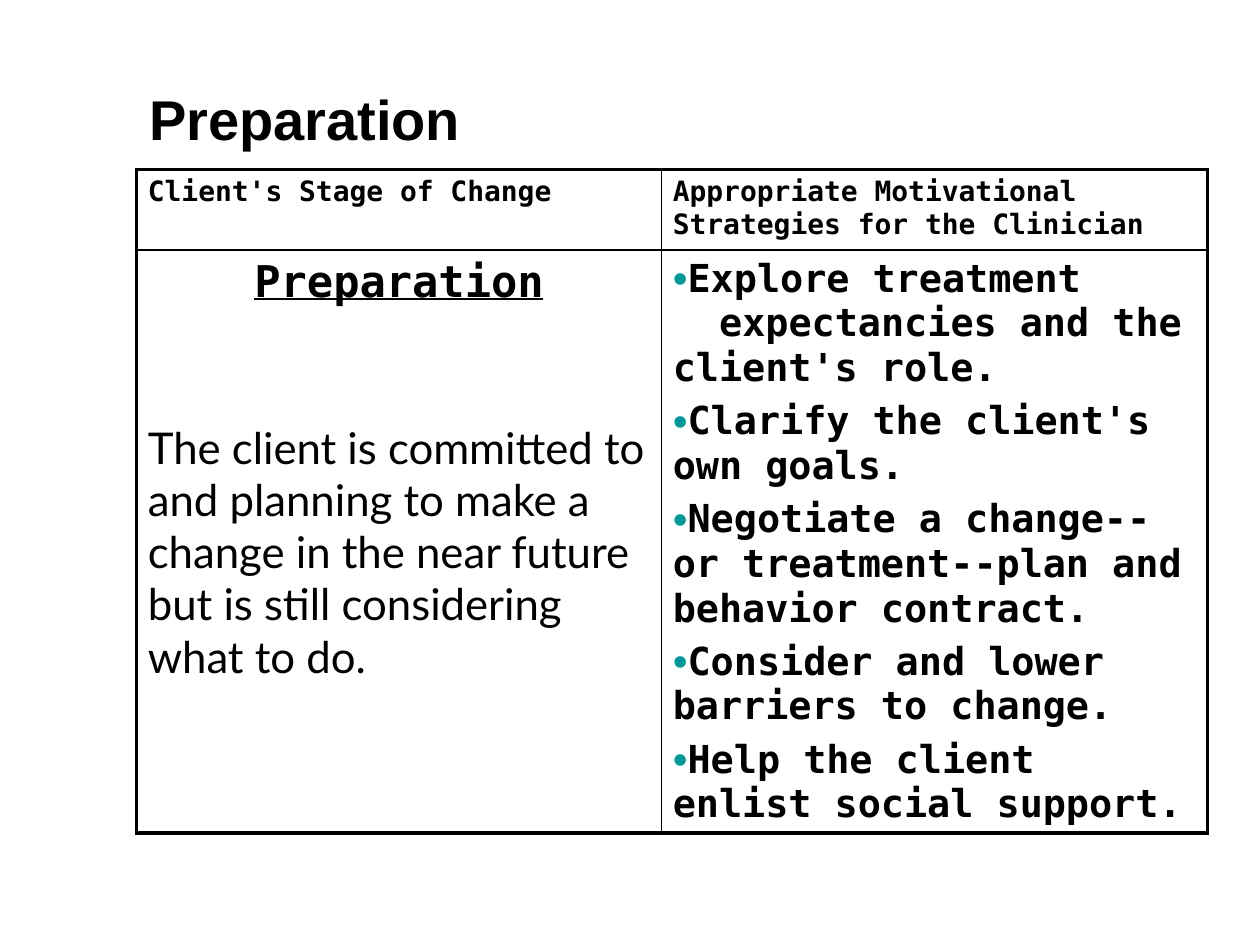
from dataclasses import dataclass
from typing import Any

from lxml import etree
from pptx import Presentation
from pptx.dml.color import RGBColor
from pptx.enum import text
from pptx.oxml import ns
from pptx.util import Pt

MONO = "DejaVu Sans Mono"
BLACK = "000000"
TEAL = "009999"
OUTER, INNER = 2.25, 1


@dataclass
class Para:
    words: str
    size: float
    font: str = MONO
    bold: bool = True
    underline: bool = False
    align: Any = text.PP_ALIGN.LEFT
    before: float = 0
    indent: float = 0
    bullet: bool = False


def color(value: str) -> RGBColor:
    return RGBColor.from_string(value)


def child(parent: Any, tag: str, **attrs: str) -> Any:
    return etree.SubElement(parent, ns.qn(tag), attrs)


def set_attrs(target: Any, values: dict[str, Any]) -> None:
    for name, value in values.items():
        setattr(target, name, value)


def add_bullet(p_pr: Any) -> None:
    child(child(p_pr, "a:buClr"), "a:srgbClr", val=TEAL)
    child(p_pr, "a:buSzPct", val="110000")
    child(p_pr, "a:buFont", typeface="Arial")
    child(p_pr, "a:buChar", char="•")


def write(tf: Any, paras: list[Para]) -> None:
    for i, item in enumerate(paras):
        p = tf.add_paragraph() if i else tf.paragraphs[0]
        p_pr = p._p.get_or_add_pPr()
        p_pr.set("marL", "0")
        p_pr.set("indent", str(Pt(item.indent)))
        if item.bullet:
            add_bullet(p_pr)
        set_attrs(p, {"alignment": item.align, "space_before": Pt(item.before)})
        r = p.add_run()
        r.text = item.words
        set_attrs(r.font, {"name": item.font, "size": Pt(item.size),
                           "bold": item.bold, "underline": item.underline})
        r.font.color.rgb = color(BLACK)


def add_borders(cell: Any, widths: dict[str, float]) -> None:
    tc_pr = cell._tc.get_or_add_tcPr()
    for side, width in widths.items():
        ln = child(tc_pr, f"a:ln{side}", w=str(Pt(width)))
        child(child(ln, "a:solidFill"), "a:srgbClr", val=BLACK)


def add_stage_table(s: Any, rows: list[list[list[Para]]],
                    widths: list[float], heights: list[float]) -> None:
    table = s.shapes.add_table(len(rows), len(widths), Pt(78), Pt(97),
                               Pt(sum(widths)), Pt(sum(heights))).table
    set_attrs(table, {"first_row": False, "horz_banding": False})
    for column, width in zip(table.columns, widths):
        column.width = Pt(width)
    for row, height in zip(table.rows, heights):
        row.height = Pt(height)
    last_row, last_col = len(rows) - 1, len(widths) - 1
    for i, row in enumerate(rows):
        for j, paras in enumerate(row):
            cell = table.cell(i, j)
            set_attrs(cell, {"margin_left": Pt(6.5), "margin_right": Pt(6.5),
                             "margin_top": Pt(3.6), "margin_bottom": Pt(3.6)})
            write(cell.text_frame, paras)
            add_borders(cell, {"L": INNER if j else OUTER,
                               "R": OUTER if j == last_col else INNER,
                               "T": INNER if i else OUTER,
                               "B": OUTER if i == last_row else INNER})
            cell.fill.background()


def main() -> None:
    prs = Presentation()
    set_attrs(prs, {"slide_width": Pt(720), "slide_height": Pt(540)})
    s = prs.slides.add_slide(prs.slide_layouts[5])

    title = s.shapes.title
    set_attrs(title, {"left": Pt(78), "top": Pt(42),
                      "width": Pt(630), "height": Pt(66)})
    set_attrs(title.text_frame, {"vertical_anchor": text.MSO_ANCHOR.TOP,
                                 "margin_top": Pt(6.4), "word_wrap": True,
                                 "auto_size": text.MSO_AUTO_SIZE.NONE})
    write(title.text_frame, [Para("Preparation", 32, "Arial")])

    stage = [
        Para("Preparation", 25, underline=True, align=text.PP_ALIGN.CENTER),
        Para("The client is committed to and planning to make a change in the "
             "near future but is still considering what to do.",
             25, "Lato", bold=False, before=65),
    ]
    later_strategies = [
        "Clarify the client's own goals.",
        "Negotiate a change--or treatment--plan and behavior contract.",
        "Consider and lower barriers to change.",
        "Help the client enlist social support.",
    ]
    strategies = [
        Para("Explore treatment", 22, bullet=True),
        Para("expectancies and the client's role.", 22, indent=26.5),
    ] + [Para(words, 22, before=4.75, bullet=True) for words in later_strategies]
    headers = [
        [Para("Client's Stage of Change", 16)],
        [Para("Appropriate Motivational Strategies for the Clinician", 16)],
    ]
    add_stage_table(s, [headers, [stage, strategies]], [300, 312], [46, 318])
    prs.save("out.pptx")


if __name__ == "__main__":
    main()
